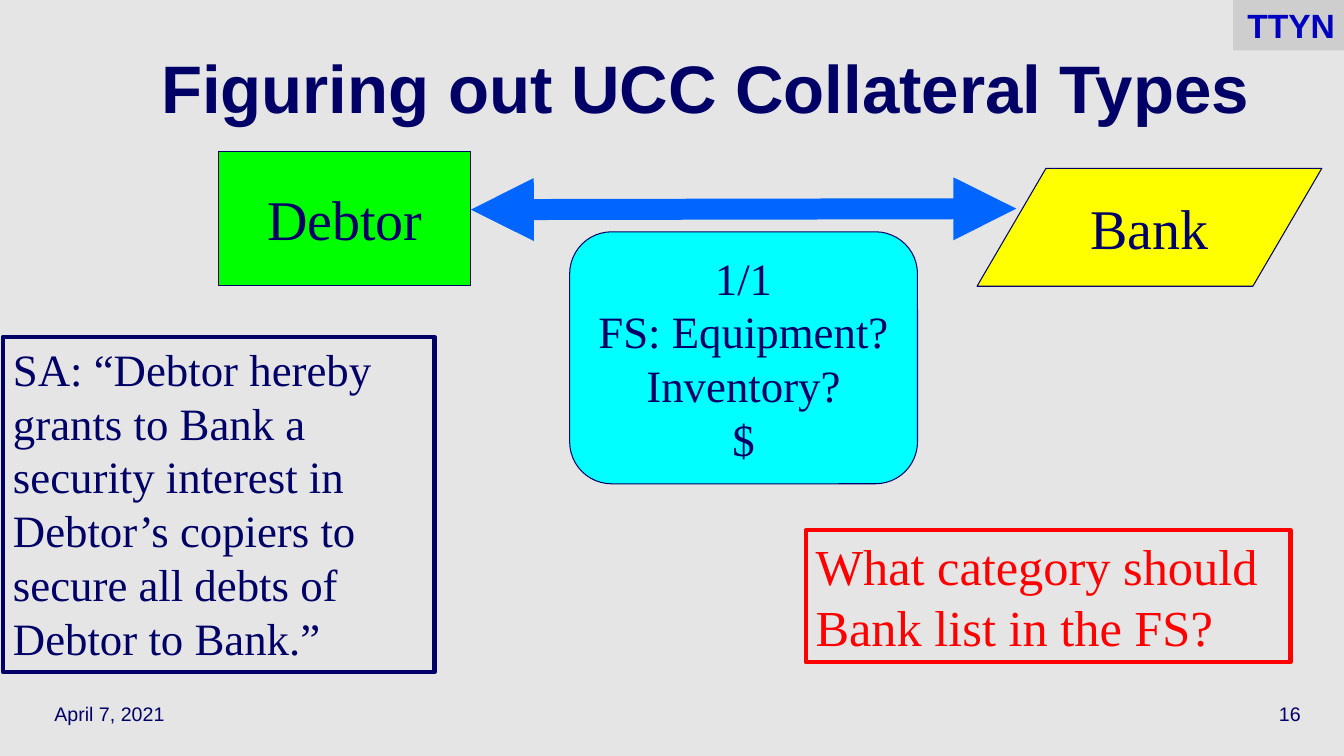
import pptx
import pptx.util
import pptx.dml.color
import pptx.enum.shapes
import pptx.enum.text
import pptx.oxml
import pptx.oxml.ns

Inches, Pt = pptx.util.Inches, pptx.util.Pt
RGBColor = pptx.dml.color.RGBColor
SHAPE = pptx.enum.shapes.MSO_SHAPE
ALIGN = pptx.enum.text.PP_ALIGN
ANCHOR = pptx.enum.text.MSO_ANCHOR

NAVY = RGBColor(0x00, 0x00, 0x66)
TAG_BLUE = RGBColor(0x00, 0x00, 0xC0)
ARROW_BLUE = RGBColor(0x00, 0x66, 0xFF)
RED = RGBColor(0xFF, 0x00, 0x00)
YELLOW = RGBColor(0xFF, 0xFF, 0x00)
GREEN = RGBColor(0x00, 0xFF, 0x00)
CYAN = RGBColor(0x00, 0xFF, 0xFF)
PALE_GRAY = RGBColor(0xE5, 0xE5, 0xE5)
TAG_GRAY = RGBColor(0xCE, 0xCE, 0xCE)
SANS, SERIF = "Arial", "Times New Roman"

# Content
TITLE = "Figuring out UCC Collateral Types"
TITLE_BOX = (0.89, 0.33, 12.22, 1.25)

# text, left, alignment
FOOTERS = [
    ("April 7, 2021", 0.44, ALIGN.LEFT),
    ("16", 10.22, ALIGN.RIGHT),
]

# preset, box, fill, lines, size, wrap
PARTIES = [
    (SHAPE.FLOWCHART_DATA, (9.69, 1.67, 3.42, 1.17), YELLOW, ["Bank"], 40, False),
    (SHAPE.FLOWCHART_PROCESS, (2.17, 1.5, 2.5, 1.33), GREEN, ["Debtor"], 40, False),
    (SHAPE.FLOWCHART_ALTERNATE_PROCESS, (5.65, 2.3, 3.45, 2.5), CYAN,
     ["1/1", "FS: Equipment?", "Inventory?", "$"], 32, True),
]
ARROW = (4.67, 2.08, 10.08, 2.07)

# box, color, size, text
NOTES = [
    ((0.03, 3.34, 4.28, 3.33), NAVY, 32,
     "SA: “Debtor hereby grants to Bank a security interest in "
     "Debtor’s copiers to secure all debts of Debtor to Bank.”"),
    ((7.99, 5.26, 4.81, 1.31), RED, 36, "What category should Bank list in the FS?"),
]
TAG, TAG_BOX = "TTYN", (12.23, 0, 1.11, 0.5)


def write(sp, lines, size, font, color, align, anchor, bold=False, wrap=True):
    tf = sp.text_frame
    tf.word_wrap = wrap
    tf.vertical_anchor = anchor
    for i, line in enumerate(lines):
        p = tf.paragraphs[0] if i == 0 else tf.add_paragraph()
        p.alignment = align
        r = p.add_run()
        r.text = line
        r.font.size = Pt(size)
        r.font.name = font
        r.font.bold = bold
        r.font.color.rgb = color


def add_box(slide, preset, box, fill=None, line=None, width=0.75):
    sp = slide.shapes.add_shape(preset, *map(Inches, box))
    sp.shadow.inherit = False
    if fill is None:
        sp.fill.background()
    else:
        sp.fill.solid()
        sp.fill.fore_color.rgb = fill
    if line is None:
        sp.line.fill.background()
    else:
        sp.line.color.rgb = line
        sp.line.width = Pt(width)
    return sp


def add_double_arrow(slide, ends, color, width):
    x1, y1, x2, y2 = map(Inches, ends)
    line = slide.shapes.add_connector(
        pptx.enum.shapes.MSO_CONNECTOR.STRAIGHT, x1, y1, x2, y2)
    line.line.color.rgb = color
    line.line.width = Pt(width)
    ln = line.line._get_or_add_ln()
    for end in ("a:headEnd", "a:tailEnd"):
        tip = pptx.oxml.xmlchemy.OxmlElement(end)
        tip.set("type", "triangle")
        ln.append(tip)
    ln.addnext(pptx.oxml.xmlchemy.OxmlElement("a:effectLst"))


def main():
    prs = pptx.Presentation()
    prs.slide_width, prs.slide_height = Inches(13.33), Inches(7.5)
    slide = prs.slides.add_slide(prs.slide_layouts[5])
    slide.background.fill.solid()
    slide.background.fill.fore_color.rgb = PALE_GRAY

    # Date and slide number
    for text, left, align in FOOTERS:
        sp = slide.shapes.add_textbox(*map(Inches, (left, 6.83, 2.78, 0.5)))
        write(sp, [text], 14, SANS, NAVY, align, ANCHOR.MIDDLE)

    # Title
    title = slide.shapes.title
    title.left, title.top, title.width, title.height = map(Inches, TITLE_BOX)
    write(title, [TITLE], 48, SANS, NAVY, ALIGN.CENTER, ANCHOR.MIDDLE, bold=True)
    title.text_frame.paragraphs[0].line_spacing = 0.7

    # Parties, the link between them and the filing
    add_double_arrow(slide, ARROW, ARROW_BLUE, 15)
    for preset, box, fill, lines, size, wrap in PARTIES:
        sp = add_box(slide, preset, box, fill, NAVY)
        write(sp, lines, size, SERIF, NAVY, ALIGN.CENTER, ANCHOR.MIDDLE, wrap=wrap)

    # Agreement and question
    for box, color, size, text in NOTES:
        sp = add_box(slide, SHAPE.RECTANGLE, box, line=color, width=3)
        write(sp, [text], size, SERIF, color, ALIGN.LEFT, ANCHOR.TOP)

    # Corner tag
    sp = add_box(slide, SHAPE.RECTANGLE, TAG_BOX, TAG_GRAY)
    write(sp, [TAG], 24, SANS, TAG_BLUE, ALIGN.RIGHT, ANCHOR.TOP, bold=True)

    prs.save("out.pptx")


if __name__ == "__main__":
    main()
